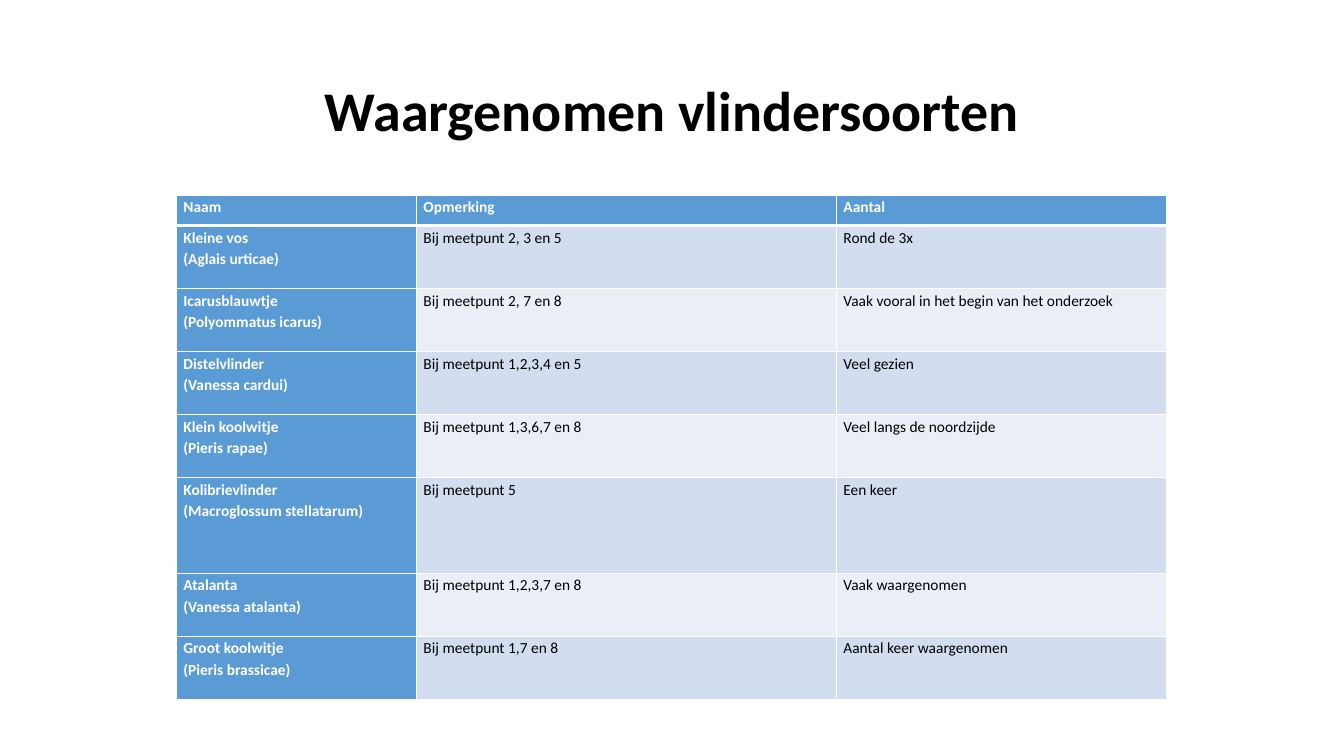
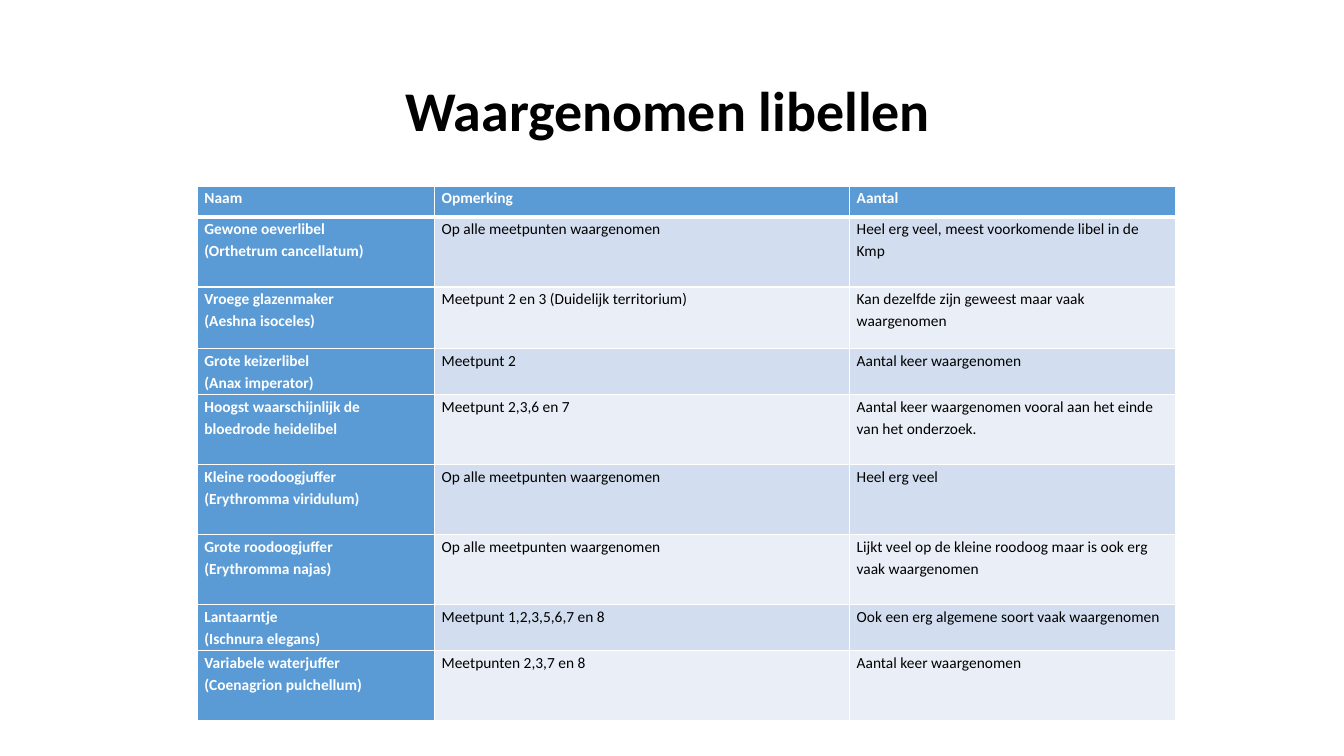
from lxml.etree import SubElement
from pptx import Presentation
from pptx.dml.color import RGBColor
from pptx.enum.text import MSO_ANCHOR, PP_ALIGN
from pptx.oxml.ns import qn
from pptx.util import Pt

# Shared colours and formats
BLACK = RGBColor(0x00, 0x00, 0x00)
WHITE = RGBColor(0xFF, 0xFF, 0xFF)
BLUE = RGBColor(0x5B, 0x9B, 0xD5)
BANDS = (RGBColor(0xD2, 0xDE, 0xEF), RGBColor(0xEA, 0xEF, 0xF7))

TITLE_FONT = {"name": "Calibri", "size": Pt(40), "bold": True}
HEADING_FONT = {"name": "Calibri", "size": Pt(11), "bold": True}
BODY_FONT = HEADING_FONT | {"bold": False}
TITLE_PARAGRAPH = {"alignment": PP_ALIGN.CENTER, "line_spacing": 0.9}
CELL_PARAGRAPH = {"alignment": PP_ALIGN.LEFT, "line_spacing": 1.15}
CELL_MARGINS = {"margin_left": Pt(5), "margin_right": Pt(5),
                "margin_top": 0, "margin_bottom": 0,
                "vertical_anchor": MSO_ANCHOR.TOP}
HEADER = ("Naam", "Opmerking", "Aantal")

# Slide content
BUTTERFLIES = [
    ("Kleine vos\n(Aglais urticae)", "Bij meetpunt 2, 3 en 5", "Rond de 3x"),
    ("Icarusblauwtje\n(Polyommatus icarus)", "Bij meetpunt 2, 7 en 8",
     "Vaak vooral in het begin van het onderzoek"),
    ("Distelvlinder\n(Vanessa cardui)", "Bij meetpunt 1,2,3,4 en 5", "Veel gezien"),
    ("Klein koolwitje\n(Pieris rapae)", "Bij meetpunt 1,3,6,7 en 8",
     "Veel langs de noordzijde"),
    ("Kolibrievlinder\n(Macroglossum stellatarum)", "Bij meetpunt 5", "Een keer"),
    ("Atalanta\n(Vanessa atalanta)", "Bij meetpunt 1,2,3,7 en 8", "Vaak waargenomen"),
    ("Groot koolwitje\n(Pieris brassicae)", "Bij meetpunt 1,7 en 8",
     "Aantal keer waargenomen"),
]
DRAGONFLIES = [
    ("Gewone oeverlibel\n(Orthetrum cancellatum)", "Op alle meetpunten waargenomen",
     "Heel erg veel, meest voorkomende libel in de Kmp"),
    ("Vroege glazenmaker\n(Aeshna isoceles)", "Meetpunt 2 en 3 (Duidelijk territorium)",
     "Kan dezelfde zijn geweest maar vaak waargenomen"),
    ("Grote keizerlibel\n(Anax imperator)", "Meetpunt 2", "Aantal keer waargenomen"),
    ("Hoogst waarschijnlijk de\nbloedrode heidelibel", "Meetpunt 2,3,6 en 7",
     "Aantal keer waargenomen vooral aan het einde van het onderzoek."),
    ("Kleine roodoogjuffer\n(Erythromma viridulum)", "Op alle meetpunten waargenomen",
     "Heel erg veel"),
    ("Grote roodoogjuffer\n(Erythromma najas)", "Op alle meetpunten waargenomen",
     "Lijkt veel op de kleine roodoog maar is ook erg vaak waargenomen"),
    ("Lantaarntje\n(Ischnura elegans)", "Meetpunt 1,2,3,5,6,7 en 8",
     "Ook een erg algemene soort vaak waargenomen"),
    ("Variabele waterjuffer\n(Coenagrion pulchellum)", "Meetpunten 2,3,7 en 8",
     "Aantal keer waargenomen"),
]


def apply_format(target, values):
    for name, value in values.items():
        setattr(target, name, value)


def write_text(text_frame, text, paragraph_format, font_format, color):
    text_frame.text = text
    for paragraph in text_frame.paragraphs:
        apply_format(paragraph, paragraph_format)
        for run in paragraph.runs:
            apply_format(run.font, font_format)
            run.font.color.rgb = color


def add_title(slide, text, left):
    text_frame = slide.shapes.add_textbox(Pt(left), Pt(28.5), Pt(828), Pt(104.5)).text_frame
    apply_format(text_frame, {"word_wrap": True, "vertical_anchor": MSO_ANCHOR.MIDDLE})
    write_text(text_frame, text, TITLE_PARAGRAPH, TITLE_FONT, BLACK)


def set_borders(cell, top, bottom):
    """Draw white borders; they must precede the fill in the cell properties."""
    properties = cell._tc.get_or_add_tcPr()
    for side, width in (("L", 1), ("R", 1), ("T", top), ("B", bottom)):
        line = SubElement(properties, qn(f"a:ln{side}"), w=str(Pt(width)))
        fill = SubElement(line, qn("a:solidFill"))
        SubElement(fill, qn("a:srgbClr"), val=str(WHITE))


def format_cell(cell, text, row, column):
    is_heading = row == 0 or column == 0
    apply_format(cell, CELL_MARGINS)
    set_borders(cell, top=3 if row == 1 else 1, bottom=3 if row == 0 else 1)
    cell.fill.solid()
    cell.fill.fore_color.rgb = BLUE if is_heading else BANDS[(row - 1) % 2]
    write_text(cell.text_frame, text, CELL_PARAGRAPH,
               HEADING_FONT if is_heading else BODY_FONT,
               WHITE if is_heading else BLACK)


def add_species_table(slide, left, top, widths, heights, species):
    rows = [HEADER, *species]
    table = slide.shapes.add_table(len(rows), len(HEADER), Pt(left), Pt(top),
                                   Pt(sum(widths)), Pt(sum(heights))).table
    for column, width in zip(table.columns, widths):
        column.width = Pt(width)
    for row, height in zip(table.rows, heights):
        row.height = Pt(height)
    for row_index, texts in enumerate(rows):
        for column_index, text in enumerate(texts):
            format_cell(table.cell(row_index, column_index), text, row_index, column_index)


def main():
    presentation = Presentation()
    presentation.slide_width, presentation.slide_height = Pt(960), Pt(540)
    blank_layout = presentation.slide_layouts[6]

    # Butterflies
    slide = presentation.slides.add_slide(blank_layout)
    add_title(slide, "Waargenomen vlindersoorten", 66)
    add_species_table(slide, 126, 139.5, (171.5, 300, 236),
                      (21.6, 45, 45, 45, 45, 68.4, 45, 45), BUTTERFLIES)

    # Dragonflies
    slide = presentation.slides.add_slide(blank_layout)
    add_title(slide, "Waargenomen libellen", 63)
    add_species_table(slide, 141, 133, (169.5, 296.5, 233),
                      (22, 50, 44, 33, 50, 50, 50, 33, 50), DRAGONFLIES)

    presentation.save("out.pptx")


if __name__ == "__main__":
    main()
